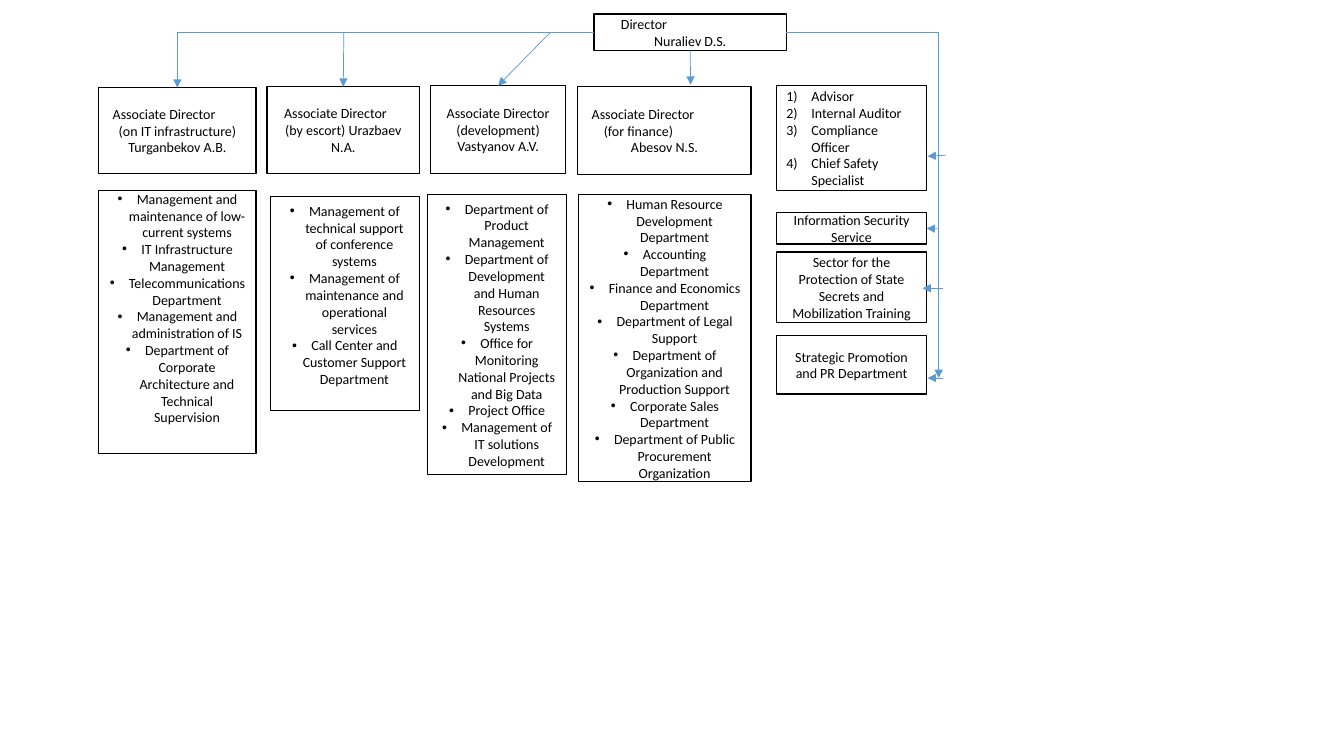
from dataclasses import dataclass

from lxml.etree import SubElement
from pptx import Presentation
from pptx.dml.color import RGBColor
from pptx.enum.shapes import MSO_CONNECTOR, MSO_SHAPE
from pptx.enum.text import MSO_ANCHOR, PP_ALIGN
from pptx.oxml.ns import qn
from pptx.shapes.autoshape import Shape
from pptx.slide import Slide
from pptx.util import Emu, Pt

PX = 9144  # 100 px to the inch
COLORS = {"paper": "FFFFFF", "ink": "000000", "arrow": "5B9BD5"}
FONT = {"name": "Calibri", "size": Pt(10)}
FRAME = {"word_wrap": True, "vertical_anchor": MSO_ANCHOR.MIDDLE,
         "margin_left": Emu(10 * PX), "margin_right": Emu(10 * PX)}
TOP, LEFT, BOTTOM, RIGHT = range(4)


@dataclass(frozen=True)
class Line:
    text: str
    align: PP_ALIGN = PP_ALIGN.CENTER
    margin: int = 0
    hanging: int = 0
    marker: tuple[str, str, str, str] | None = None  # font, tag, attribute, value


@dataclass(frozen=True)
class Box:
    key: str
    left: int
    top: int
    width: int
    height: int
    lines: list[Line]
    top_inset: int = 5
    bottom_inset: int = 5


@dataclass(frozen=True)
class Arrow:
    start: tuple[int, int]
    end: tuple[int, int]
    start_joint: tuple[str, int] | None = None
    end_joint: tuple[str, int] | None = None
    bent: bool = False


def shifted(text: str, margin: int) -> Line:
    return Line(text, PP_ALIGN.LEFT, margin)


def bullets(*texts: str) -> list[Line]:
    marker = ("Arial", "a:buChar", "char", "•")
    return [Line(text, margin=19, hanging=19, marker=marker) for text in texts]


def numbers(*texts: str) -> list[Line]:
    marker = ("+mj-lt", "a:buAutoNum", "type", "arabicParenR")
    return [Line(text, PP_ALIGN.LEFT, 25, 25, marker) for text in texts]


BOXES = [
    Box("Director", 589, 14, 191, 36, [shifted("Director", 17), Line("Nuraliev D.S.")]),
    Box("Infrastructure", 98, 87, 156, 85,
        [shifted("Associate Director", 4), Line("(on IT infrastructure) Turganbekov A.B.")]),
    Box("Escort", 265, 86, 151, 86,
        [shifted("Associate Director", 7), Line("(by escort) Urazbaev N.A.")]),
    Box("Development", 427, 85, 134, 87,
        [Line("Associate Director (development) Vastyanov A.V.")]),
    Box("Finance", 573, 86, 172, 87,
        [shifted("Associate Director", 4), shifted("(for finance)", 16), Line("Abesov N.S.")]),
    Box("Infrastructure units", 98, 189, 156, 261, bullets(
        "Management and maintenance of low-current systems",
        "IT Infrastructure Management",
        "Telecommunications Department",
        "Management and administration of IS",
        "Department of Corporate Architecture and Technical Supervision"),
        top_inset=0, bottom_inset=28),
    Box("Escort units", 268, 195, 148, 212, bullets(
        "Management of technical support of conference systems",
        "Management of maintenance and operational services",
        "Call Center and Customer Support Department"), bottom_inset=22),
    Box("Development units", 424, 193, 138, 278, bullets(
        "Department of Product Management",
        "Department of Development and Human Resources Systems",
        "Office for Monitoring National Projects and Big Data",
        "Project Office",
        "Management of IT solutions Development")),
    Box("Finance units", 574, 193, 171, 285, bullets(
        "Human Resource Development Department",
        "Accounting Department",
        "Finance and Economics Department",
        "Department of Legal Support",
        "Department of Organization and Production Support",
        "Corporate Sales Department",
        "Department of Public Procurement Organization")),
    Box("Advisors", 770, 85, 149, 104, numbers(
        "Advisor", "Internal Auditor", "Compliance Officer", "Chief Safety Specialist")),
    Box("Security", 770, 211, 149, 31, [Line("Information Security Service")]),
    Box("Secrets", 770, 250, 149, 70,
        [Line("Sector for the Protection of State Secrets and Mobilization Training")]),
    Box("Promotion", 770, 333, 149, 58, [Line("Strategic Promotion and PR Department")]),
]

ARROWS = [
    Arrow((589, 32), (176, 87), ("Director", LEFT), ("Infrastructure", TOP), bent=True),
    Arrow((780, 32), (931, 375), ("Director", RIGHT), bent=True),
    Arrow((341, 32), (341, 86), end_joint=("Escort", TOP)),
    Arrow((546, 32), (494, 85), end_joint=("Development", TOP)),
    Arrow((685, 50), (685, 84), start_joint=("Director", BOTTOM)),
    Arrow((938, 154), (920, 155)),
    Arrow((930, 227), (919, 226), end_joint=("Security", RIGHT)),
    Arrow((935, 286), (915, 286)),
    Arrow((935, 375), (920, 375)),
]


def color(name: str) -> RGBColor:
    return RGBColor.from_string(COLORS[name])


def apply_format(target: object, values: dict) -> None:
    for key, value in values.items():
        setattr(target, key, value)


def draw_box(page: Slide, box: Box) -> Shape:
    shape = page.shapes.add_shape(
        MSO_SHAPE.RECTANGLE, *(Emu(px * PX) for px in (box.left, box.top, box.width, box.height)))
    shape.shadow.inherit = False
    shape.fill.solid()
    shape.fill.fore_color.rgb = color("paper")
    shape.line.color.rgb = color("ink")
    shape.line.width = Pt(1)
    frame = shape.text_frame
    apply_format(frame, FRAME)
    frame.margin_top = Emu(box.top_inset * PX)
    frame.margin_bottom = Emu(box.bottom_inset * PX)
    for index, line in enumerate(box.lines):
        para = frame.add_paragraph() if index else frame.paragraphs[0]
        para.alignment = line.align
        properties = para._p.get_or_add_pPr()
        if line.margin:
            properties.set("marL", str(line.margin * PX))
            properties.set("indent", str(-line.hanging * PX))
        if line.marker:
            font, tag, attribute, value = line.marker
            SubElement(properties, qn("a:buFont")).set("typeface", font)
            SubElement(properties, qn(tag)).set(attribute, value)
        span = para.add_run()
        span.text = line.text
        apply_format(span.font, FONT)
        span.font.color.rgb = color("ink")
    return shape


def draw_arrow(page: Slide, arrow: Arrow, shapes: dict[str, Shape]) -> None:
    kind = MSO_CONNECTOR.ELBOW if arrow.bent else MSO_CONNECTOR.STRAIGHT
    connector = page.shapes.add_connector(
        kind, *(Emu(px * PX) for px in (*arrow.start, *arrow.end)))
    for joint, connect in ((arrow.start_joint, connector.begin_connect),
                           (arrow.end_joint, connector.end_connect)):
        if joint:
            key, side = joint
            connect(shapes[key], side)
    connector.line.color.rgb = color("arrow")
    connector.line.width = Pt(0.5)
    properties = connector._element.spPr
    if arrow.bent:
        properties.find(qn("a:prstGeom")).set("prst", "bentConnector2")
    SubElement(properties.find(qn("a:ln")), qn("a:tailEnd")).set("type", "triangle")
    SubElement(properties, qn("a:effectLst"))


def main() -> None:
    deck = Presentation()
    deck.slide_width, deck.slide_height = Emu(1333 * PX), Emu(750 * PX)
    page = deck.slides.add_slide(deck.slide_layouts[6])
    shapes = {box.key: draw_box(page, box) for box in BOXES}
    for arrow in ARROWS:
        draw_arrow(page, arrow, shapes)
    deck.save("out.pptx")


if __name__ == "__main__":
    main()
